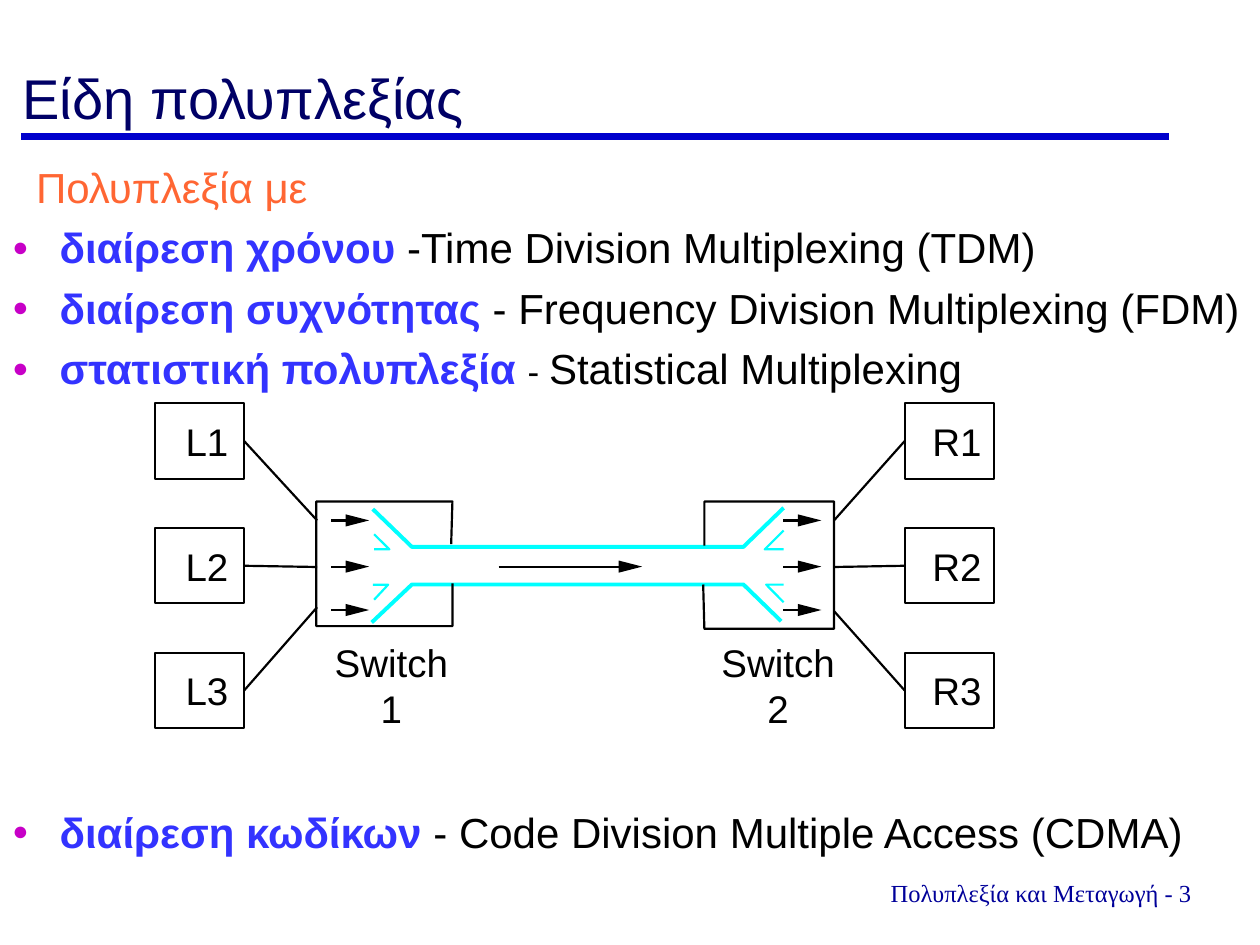
"""Build a slide on the kinds of multiplexing, with a two-switch diagram."""
import lxml.etree
import pptx
import pptx.dml.color
import pptx.enum.shapes
import pptx.enum.text
import pptx.oxml.ns
import pptx.util

Pt = pptx.util.Pt
ALIGN = pptx.enum.text.PP_ALIGN
ANCHOR = pptx.enum.text.MSO_ANCHOR
COLORS = {
    "black": "000000", "title": "000066", "rule": "0000CC", "footer": "000099",
    "heading": "FF6633", "term": "3333FF", "bullet": "C700C7", "trunk": "00FFFF",
}
BOX_WIDTH, BOX_HEIGHT, BOX_TOP, BOX_PITCH = 51, 43, 230.5, 71.3
LINE_WIDTH = 1.25
BULLETS = [
    [("διαίρεση χρόνου", "term", 24), (" -Time Division Multiplexing (TDM)", "black", 24)],
    [("διαίρεση συχνότητας", "term", 24),
     (" - Frequency Division Multiplexing (FDM)", "black", 24)],
    [("στατιστική πολυπλεξία ", "term", 24), ("- ", "black", 20),
     ("Statistical Multiplexing", "black", 24)],
    [("διαίρεση κωδίκων", "term", 24),
     (" - Code Division Multiple Access (CDMA)", "black", 24)],
]
SWITCHES = [
    [(257.8, 311), (258.5, 286.6), (180.7, 286.6), (180.7, 357.8), (258.5, 357.8), (258.5, 333.4)],
    [(401.8, 334), (402.5, 359.3), (476.6, 359.3), (476.6, 286.6), (402.5, 286.6), (402.5, 311.8)],
]
TRUNK_EDGES = [
    [(213, 290.9), (235.4, 312.5), (424.8, 312.5), (447.8, 290.2)],
    [(446.4, 355), (424.8, 334), (235.4, 334), (212.4, 355.7)],
]
TRUNK_TICKS = [
    [(213.8, 313.9), (222.5, 313.9), (213.8, 305.3)],
    [(213.1, 334.1), (221.8, 334.1), (213.8, 342.7)],
    [(447.8, 313.9), (437, 313.9), (447.8, 303.1)],
    [(447.8, 334.1), (437.8, 334.1), (447.8, 344.2)],
]


def rgb(name):
    """Return the named colour."""
    return pptx.dml.color.RGBColor.from_string(COLORS[name])


def format_run(run, size, color, font="Arial", bold=False):
    """Set the font of a run."""
    run.font.name = font
    run.font.size = Pt(size)
    run.font.bold = bold
    run.font.color.rgb = rgb(color)


def set_line(shape, color, width):
    """Give a shape or connector a solid line."""
    shape.line.color.rgb = rgb(color)
    shape.line.width = Pt(width)


def add_text(slide, text, box, size, color, font="Arial", align=ALIGN.LEFT,
             anchor=ANCHOR.TOP, inset=True):
    """Add a text box with one formatted line."""
    shape = slide.shapes.add_textbox(*map(Pt, box))
    frame = shape.text_frame
    frame.word_wrap = inset
    frame.vertical_anchor = anchor
    if not inset:
        frame.margin_left = frame.margin_right = frame.margin_top = frame.margin_bottom = 0
    frame.text = text
    frame.paragraphs[0].alignment = align
    format_run(frame.paragraphs[0].runs[0], size, color, font)


def set_indent(paragraph, left, first):
    """Set the left margin and first-line indent of a paragraph."""
    properties = paragraph._p.get_or_add_pPr()
    properties.set("marL", str(Pt(left)))
    properties.set("indent", str(Pt(first)))
    return properties


def add_bullet(properties):
    """Add the round coloured bullet to paragraph properties."""
    qn = pptx.oxml.ns.qn
    color = lxml.etree.SubElement(properties, qn("a:buClr"))
    lxml.etree.SubElement(color, qn("a:srgbClr"), val=COLORS["bullet"])
    lxml.etree.SubElement(properties, qn("a:buSzPct"), val="64000")
    lxml.etree.SubElement(properties, qn("a:buFont"), typeface="Arial")
    lxml.etree.SubElement(properties, qn("a:buChar"), char="●")


def add_body(slide):
    """Add the heading and bullets, with room for the diagram before the last."""
    shape = slide.shapes.add_textbox(Pt(0), Pt(88.6), Pt(808), Pt(392))
    frame = shape.text_frame
    frame.word_wrap = True
    frame.text = "Πολυπλεξία με"
    format_run(frame.paragraphs[0].runs[0], 24, "heading")
    set_indent(frame.paragraphs[0], 27, -13.5)
    for bullet in BULLETS:
        paragraph = frame.add_paragraph()
        paragraph.space_before = Pt(236 if bullet is BULLETS[-1] else 5.8)
        add_bullet(set_indent(paragraph, 27, -27))
        for text, color, size in bullet:
            run = paragraph.add_run()
            run.text = text
            format_run(run, size, color, bold=color == "term")


def add_line(slide, start, end, color="black", width=LINE_WIDTH):
    """Add a straight connector without a shadow."""
    connector = slide.shapes.add_connector(
        pptx.enum.shapes.MSO_CONNECTOR.STRAIGHT, *map(Pt, start + end))
    set_line(connector, color, width)
    lxml.etree.SubElement(connector._element.spPr, pptx.oxml.ns.qn("a:effectLst"))
    return connector


def add_outline(slide, points, color="black", width=LINE_WIDTH, filled=False):
    """Add an open unfilled outline, or a closed filled one."""
    corners = [(Pt(x), Pt(y)) for x, y in points]
    builder = slide.shapes.build_freeform(*corners[0])
    builder.add_line_segments(corners[1:], close=filled)
    shape = builder.convert_to_shape()
    shape.shadow.inherit = False
    if filled:
        shape.fill.solid()
        shape.fill.fore_color.rgb = rgb(color)
        shape.line.fill.background()
    else:
        shape.fill.background()
        set_line(shape, color, width)


def add_arrow(slide, left, tip, y):
    """Add a horizontal arrow with a long slim head."""
    add_line(slide, (left, y), (tip - 10.5, y))
    add_outline(slide, [(tip - 13.5, y - 3.5), (tip, y), (tip - 13.5, y + 3.5)], filled=True)


def add_host(slide, label, left, top):
    """Add a labelled host box."""
    shape = slide.shapes.add_shape(
        pptx.enum.shapes.MSO_SHAPE.RECTANGLE, *map(Pt, (left, top, BOX_WIDTH, BOX_HEIGHT)))
    shape.shadow.inherit = False
    shape.fill.background()
    set_line(shape, "black", LINE_WIDTH)
    frame = shape.text_frame
    frame.word_wrap = False
    frame.margin_left = Pt(8.5)
    frame.margin_right = frame.margin_top = frame.margin_bottom = 0
    frame.vertical_anchor = ANCHOR.MIDDLE
    frame.text = label
    frame.paragraphs[0].alignment = ALIGN.CENTER
    format_run(frame.paragraphs[0].runs[0], 22, "black")
    return shape


def add_hosts(slide, side, left, connection_site, link_x, link_ys):
    """Add a column of hosts, each linked to its switch."""
    for index, link_y in enumerate(link_ys):
        top = BOX_TOP + index * BOX_PITCH
        host = add_host(slide, f"{side}{index + 1}", left, top)
        link = add_line(slide, (left, top), (link_x, link_y))
        link.begin_connect(host, connection_site)


def add_diagram(slide):
    """Add the hosts, switches, shared trunk and arrows."""
    for points in TRUNK_EDGES:
        add_outline(slide, points, "trunk", 2.25)
    add_hosts(slide, "L", 88.5, 3, 181.2, (297.4, 324, 347))
    add_hosts(slide, "R", 517, 1, 476.6, (297.4, 324, 349.2))
    for points in SWITCHES:
        add_outline(slide, points)
    for points in TRUNK_TICKS:
        add_outline(slide, points, "trunk")
    add_arrow(slide, 285, 367, 323.8)
    for left in (189.2, 447.6):
        for y in (297.4, 323.8, 348.6):
            add_arrow(slide, left, left + 21.8, y)
    for number, left in enumerate((182.2, 403.2), 1):
        add_text(slide, f"Switch {number}", (left, 365, 82.8, 26.6), 22, "black",
                 align=ALIGN.CENTER, inset=False)


def main():
    """Build and save the slide."""
    presentation = pptx.Presentation()
    presentation.slide_width, presentation.slide_height = Pt(720), Pt(540)
    slide = presentation.slides.add_slide(presentation.slide_layouts[6])
    add_line(slide, (12.2, 77.8), (668.2, 77.8), "rule", 4)
    add_text(slide, "Πολυπλεξία και Μεταγωγή - 3", (490, 498.2, 210, 24), 14, "footer",
             font="Times New Roman", align=ALIGN.CENTER)
    add_text(slide, "Είδη πολυπλεξίας", (5.8, 18, 696, 60.5), 32, "title", anchor=ANCHOR.BOTTOM)
    add_body(slide)
    add_diagram(slide)
    presentation.save("out.pptx")


if __name__ == "__main__":
    main()
